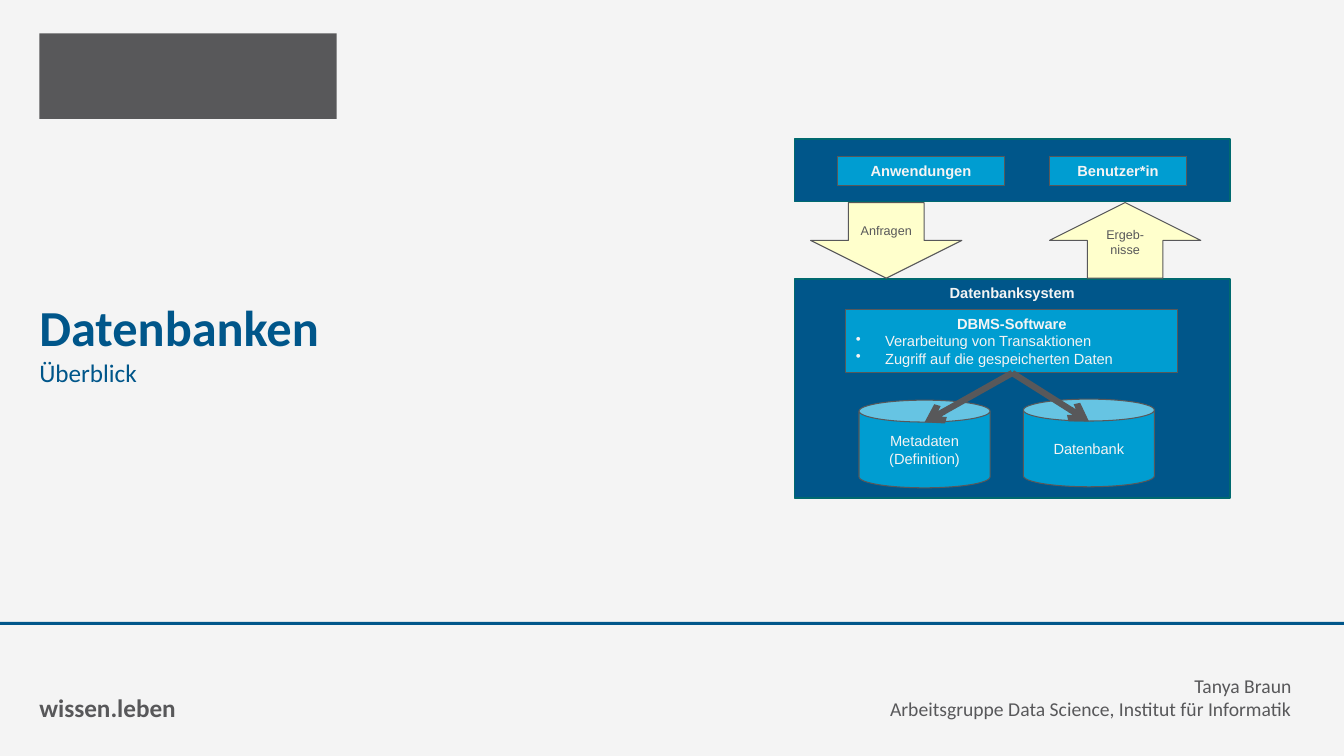
from dataclasses import dataclass

import pptx
from lxml import etree
from pptx import util as u
from pptx.dml import color
from pptx.enum import shapes, text
from pptx.oxml import ns

PX = 9144
BLUE, SKY, TEAL = "00568A", "009DD1", "00696F"
GREY, PALE, CREAM = "58585A", "F4F4F4", "FFFFCC"
SHAPE = shapes.MSO_SHAPE
TOP, MIDDLE, BOTTOM = text.MSO_ANCHOR.TOP, text.MSO_ANCHOR.MIDDLE, text.MSO_ANCHOR.BOTTOM
LEFT, CENTER, RIGHT = text.PP_ALIGN.LEFT, text.PP_ALIGN.CENTER, text.PP_ALIGN.RIGHT


@dataclass
class Line:
    words: str
    size: float = 10.5
    hue: str = PALE
    bold: bool = False
    font: str = "Arial"
    align: int = CENTER
    bullet: bool = False


@dataclass
class Block:
    kind: int
    area: tuple[int, int, int, int]
    fill: str
    edge: str | None = GREY
    weight: float = 0.75
    lines: tuple[Line, ...] = ()
    anchor: int = MIDDLE
    inset_top: int = 5


@dataclass
class Caption:
    area: tuple[int, int, int, int]
    lines: tuple[Line, ...]
    anchor: int


@dataclass
class Arrow:
    start: tuple[int, int]
    end: tuple[int, int]


def rgb(value: str) -> color.RGBColor:
    return color.RGBColor.from_string(value)


def px(*lengths: int) -> list[u.Emu]:
    return [u.Emu(length * PX) for length in lengths]


def write(frame, lines: tuple[Line, ...], anchor: int) -> None:
    frame.word_wrap = True
    frame.vertical_anchor = anchor
    for index, line in enumerate(lines):
        para = frame.add_paragraph() if index else frame.paragraphs[0]
        para.text = line.words
        para.alignment = line.align
        font = para.font
        font.name, font.size, font.bold = line.font, u.Pt(line.size), line.bold
        font.color.rgb = rgb(line.hue)
        if line.bullet:
            props = para._p.get_or_add_pPr()
            props.set("marL", str(29 * PX))
            props.set("indent", str(-29 * PX))
            mark = etree.Element(ns.qn("a:buChar"), char="•")
            props.insert_element_before(mark, "a:tabLst", "a:defRPr", "a:extLst")


def clear_margins(frame) -> None:
    frame.margin_left = frame.margin_top = frame.margin_right = frame.margin_bottom = 0


def draw_block(page, block: Block) -> None:
    box = page.shapes.add_shape(block.kind, *px(*block.area))
    box.shadow.inherit = False
    box.fill.solid()
    box.fill.fore_color.rgb = rgb(block.fill)
    if block.edge:
        box.line.color.rgb = rgb(block.edge)
        box.line.width = u.Pt(block.weight)
    else:
        box.line.fill.background()
    if block.lines:
        box.text_frame.margin_top = px(block.inset_top)[0]
        write(box.text_frame, block.lines, block.anchor)


def draw_caption(page, caption: Caption) -> None:
    frame = page.shapes.add_textbox(*px(*caption.area)).text_frame
    clear_margins(frame)
    write(frame, caption.lines, caption.anchor)


def draw_arrow(page, arrow: Arrow) -> None:
    link = page.shapes.add_connector(
        shapes.MSO_CONNECTOR.STRAIGHT, *px(*arrow.start, *arrow.end))
    link.line.color.rgb = rgb(GREY)
    link.line.width = u.Pt(4.5)
    etree.SubElement(link.line._get_or_add_ln(), ns.qn("a:tailEnd"), type="arrow")
    etree.SubElement(link._element.spPr, ns.qn("a:effectLst"))


def draw_title(page, words: str) -> None:
    title = page.shapes.title
    title.left, title.top, title.width, title.height = px(39, 215, 934, 140)
    clear_margins(title.text_frame)
    write(title.text_frame, (Line(words, 36, BLUE, True, "Calibri", LEFT),), BOTTOM)
    title.text_frame.paragraphs[0].line_spacing = 0.9


BLOCKS = (
    Block(SHAPE.RECTANGLE, (0, 617, 1333, 3), BLUE, None),
    Block(SHAPE.RECTANGLE, (39, 33, 295, 85), GREY, None),
    Block(SHAPE.RECTANGLE, (788, 277, 432, 217), BLUE, TEAL, 1,
          (Line("Datenbanksystem", bold=True),), TOP),
    Block(SHAPE.RECTANGLE, (788, 138, 432, 62), BLUE, TEAL, 1),
    Block(SHAPE.CAN, (852, 397, 130, 87), SKY, lines=(Line("Metadaten (Definition)"),)),
    Block(SHAPE.CAN, (1015, 396, 130, 87), SKY, lines=(Line("Datenbank"),)),
    Block(SHAPE.RECTANGLE, (839, 307, 329, 63), SKY, anchor=TOP, lines=(
        Line("DBMS-Software", bold=True),
        Line("Verarbeitung von Transaktionen", align=LEFT, bullet=True),
        Line("Zugriff auf die gespeicherten Daten", align=LEFT, bullet=True))),
    Block(SHAPE.RECTANGLE, (831, 155, 165, 29), SKY, lines=(Line("Anwendungen", bold=True),)),
    Block(SHAPE.RECTANGLE, (1041, 155, 136, 29), SKY, lines=(Line("Benutzer*in", bold=True),)),
    Block(SHAPE.DOWN_ARROW, (804, 201, 150, 75), CREAM,
          lines=(Line("Anfragen", 9, GREY),), anchor=TOP, inset_top=20),
    Block(SHAPE.UP_ARROW, (1041, 201, 150, 75), CREAM,
          lines=(Line("Ergeb-nisse", 9, GREY),), anchor=TOP),
)
CAPTIONS = (
    Caption((39, 354, 700, 98), (Line("Überblick", 18, BLUE, False, "Calibri", LEFT),), TOP),
    Caption((525, 664, 756, 51), (
        Line("Tanya Braun", 14, GREY, False, "Calibri", RIGHT),
        Line("Arbeitsgruppe Data Science, Institut für Informatik",
             14, GREY, False, "Calibri", RIGHT)), BOTTOM),
    Caption((39, 685, 200, 34), (Line("wissen.leben", 18, GREY, True, "Calibri", LEFT),), MIDDLE),
)
ARROWS = (Arrow((1004, 370), (917, 419)), Arrow((1004, 370), (1080, 418)))


def main() -> None:
    deck = pptx.Presentation()
    deck.slide_width, deck.slide_height = px(1333, 750)
    page = deck.slides.add_slide(deck.slide_layouts.get_by_name("Title Only"))
    page.background.fill.solid()
    page.background.fill.fore_color.rgb = rgb(PALE)
    draw_title(page, "Datenbanken")
    for caption in CAPTIONS:
        draw_caption(page, caption)
    for block in BLOCKS:
        draw_block(page, block)
    for arrow in ARROWS:
        draw_arrow(page, arrow)
    deck.save("out.pptx")


if __name__ == "__main__":
    main()
